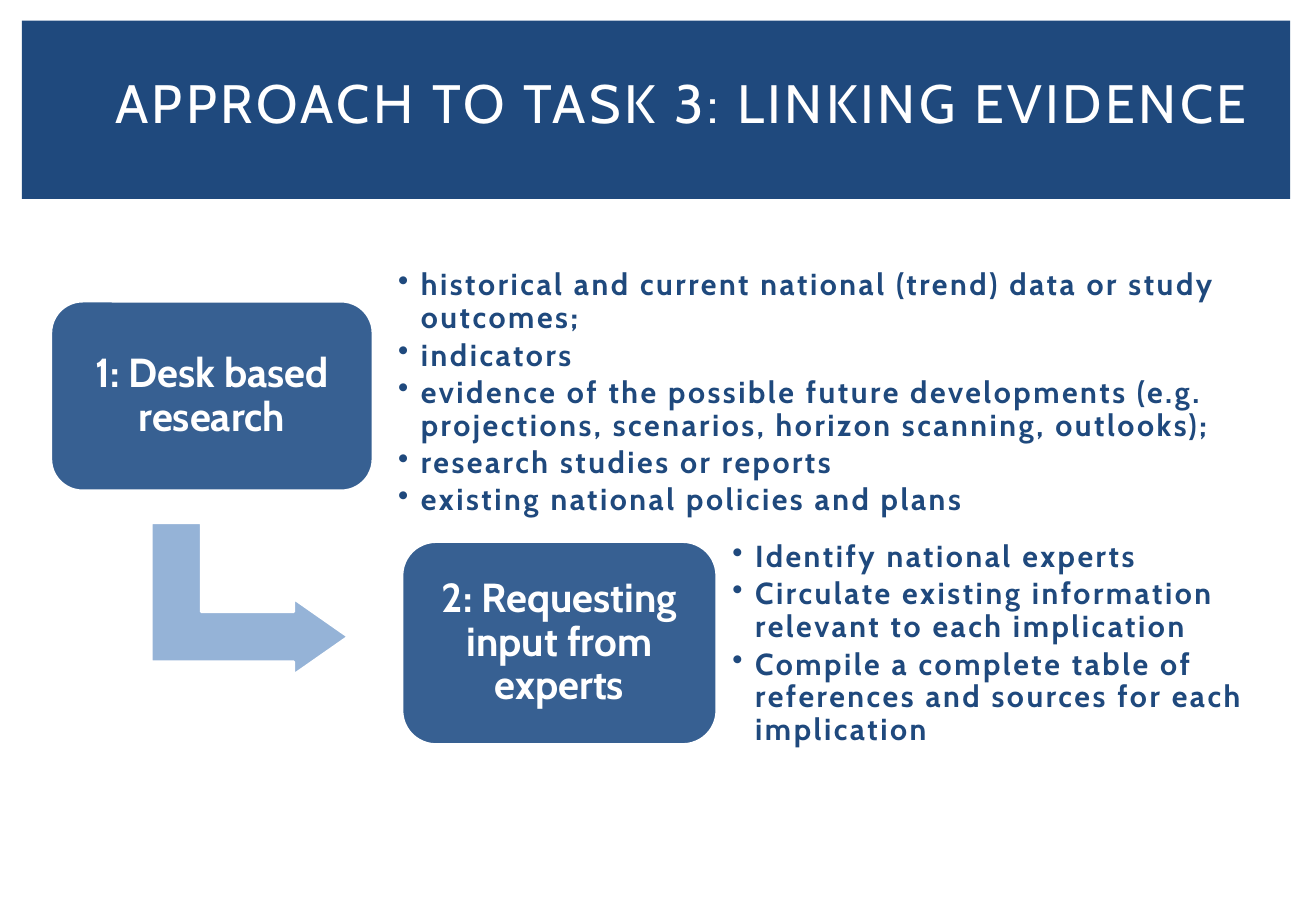
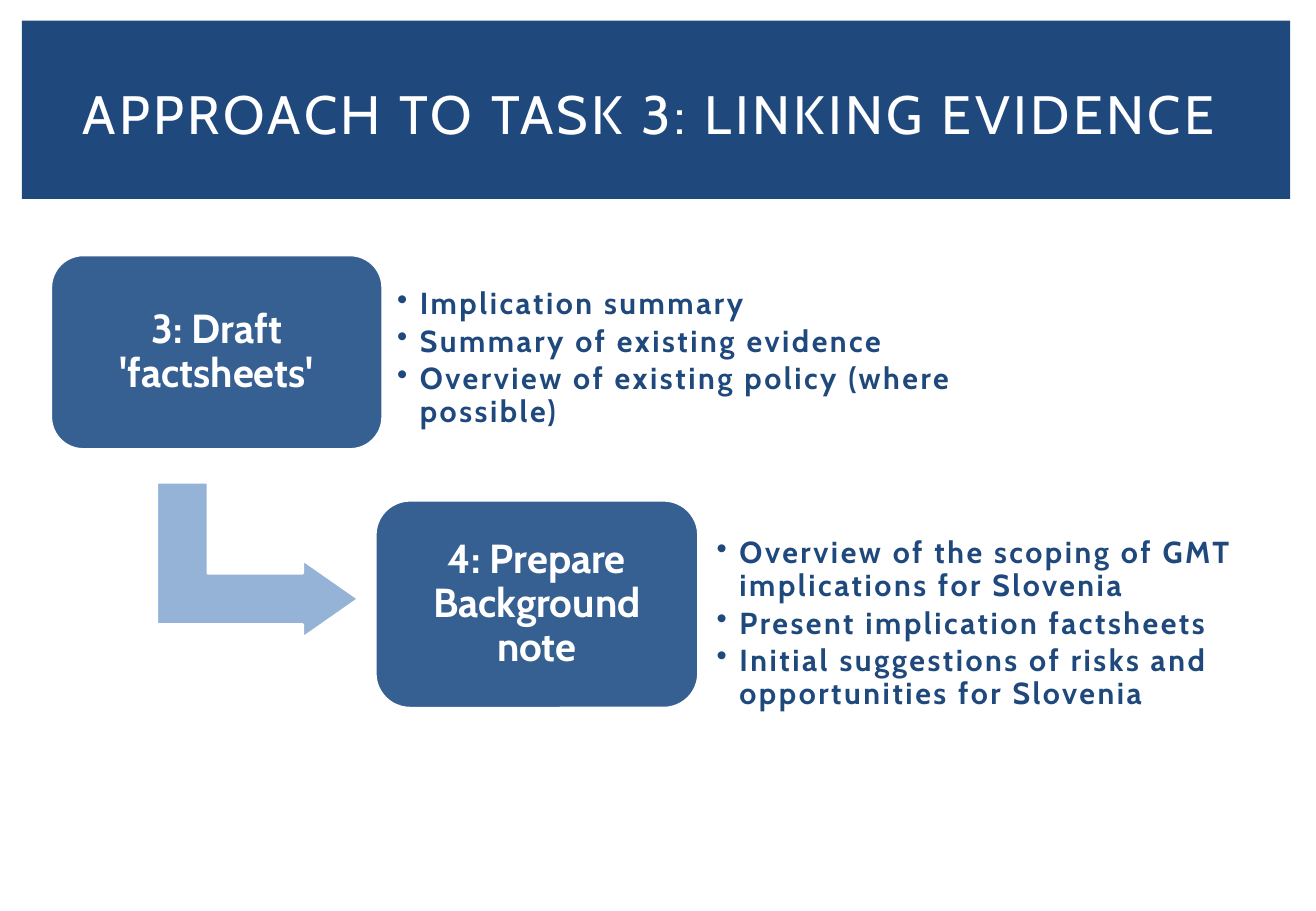
"""Build two slides on linking evidence as stepped box flows."""
from dataclasses import dataclass

from lxml import etree
from pptx import Presentation
from pptx.dml.color import RGBColor
from pptx.enum import shapes, text
from pptx.oxml.ns import qn
from pptx.util import Pt


@dataclass(frozen=True)
class Theme:
    font: str = "Cabin"
    navy: str = "1F497D"
    blue: str = "376092"
    pale: str = "95B3D7"
    white: str = "FFFFFF"
    head: int = 32
    step: int = 24
    body: int = 18


T = Theme()
TITLE = "APPROACH TO TASK 3: LINKING EVIDENCE"
LEFT, MID = text.PP_ALIGN.LEFT, text.PP_ALIGN.CENTER
SLIDES = [
    {
        "title": (44.6, 37.4, MID),
        "arrow": (103, 296.6, 90, 116.6),
        "steps": [
            ("1: Desk based research", (30.2, 178.6, 190.8, 112.3)),
            ("2: Requesting input from experts", (238.3, 321.1, 186.5, 120.2)),
        ],
        "lists": [
            ((231, 167.8, 504, 131), [
                "historical and current national (trend) data or study outcomes;",
                "indicators",
                "evidence of the possible future developments (e.g. projections, "
                "scenarios, horizon scanning, outlooks);",
                "research studies or reports",
                "existing national policies and plans",
            ]),
            ((429.1, 321, 332.6, 121.7), [
                "Identify national experts",
                "Circulate existing information relevant to each implication",
                "Compile a complete table of references and sources for each "
                "implication",
            ]),
        ],
    },
    {
        "title": (41.8, 43.9, LEFT),
        "arrow": (106.6, 272.2, 92.2, 119.5),
        "steps": [
            ("3: Draft 'factsheets'", (30.2, 151.2, 196.6, 115.2)),
            ("4: Prepare Background note", (222.5, 296.6, 191.5, 123.1)),
        ],
        "lists": [
            ((230.4, 145.4, 424, 134.6), [
                "Implication summary",
                "Summary of existing evidence",
                "Overview of existing policy (where possible)",
            ]),
            ((419.8, 314.6, 342, 110.9), [
                "Overview of the scoping of GMT implications for Slovenia",
                "Present implication factsheets",
                "Initial suggestions of risks and opportunities for Slovenia",
            ]),
        ],
    },
]


def rgb(code):
    """Turn a hex code into a colour."""
    return RGBColor.from_string(code)


def place(box):
    """Turn point values into lengths."""
    return [Pt(v) for v in box]


def write(shape, lines, size, color, align, bold=True, pad=7.2, track=0,
          lead=0.9, after=0, anchor=text.MSO_ANCHOR.MIDDLE):
    """Fill a shape with paragraphs in one style."""
    frame = shape.text_frame
    frame.word_wrap = True
    frame.auto_size = text.MSO_AUTO_SIZE.NONE
    frame.vertical_anchor = anchor
    frame.margin_left = frame.margin_right = Pt(pad)
    frame.margin_top = frame.margin_bottom = Pt(min(pad, 7.2))
    frame.text = "\n".join(lines)
    for para in frame.paragraphs:
        para.alignment = align
        para.line_spacing = lead
        para.space_before = Pt(0)
        para.space_after = Pt(after)
        font = para.font
        font.name, font.size, font.bold = T.font, Pt(size), bold
        font.color.rgb = rgb(color)
    for prop in shape.element.iter(qn("a:defRPr")):
        prop.set("spc", str(int(track * 100)))


def block(slide, kind, box, fill, adj=(), line=None):
    """Draw a filled preset shape."""
    shape = slide.shapes.add_shape(kind, *place(box))
    shape.shadow.inherit = False
    shape.fill.solid()
    shape.fill.fore_color.rgb = rgb(fill)
    for i, value in enumerate(adj):
        shape.adjustments[i] = value
    if line:
        shape.line.color.rgb = rgb(line)
        shape.line.width = Pt(1.5)
    else:
        shape.line.fill.background()
    return shape


def band(slide):
    """Draw the title band and move it to the slide's layout."""
    shape = block(slide, shapes.MSO_SHAPE.RECTANGLE,
                  (13, 12.2, 751.7, 105.8), T.navy)
    slide.slide_layout.shapes.element.insert(2, shape.element)


def head(slide, left, top, align):
    """Place and style the title."""
    title = slide.shapes.title
    title.left, title.top, title.width, title.height = place(
        (left, top, 719.3, 53.3))
    write(title, [TITLE], T.head, T.white, align, bold=False, track=2,
          lead=1.0, pad=7.2, anchor=text.MSO_ANCHOR.TOP)
    title.text_frame.margin_top = title.text_frame.margin_bottom = Pt(3.6)


def arrow(slide, box):
    """Draw the bent arrow that leads to the next step."""
    shape = block(slide, shapes.MSO_SHAPE.BENT_UP_ARROW, box, T.pale,
                  (0.328, 0.25, 0.358), T.white)
    shape.rotation = 90


def step(slide, label, box):
    """Draw a rounded step box with its label."""
    shape = block(slide, shapes.MSO_SHAPE.ROUNDED_RECTANGLE, box, T.blue,
                  (0.167,), T.white)
    write(shape, [label], T.step, T.white, MID)


def bullets(slide, box, lines):
    """Add a bulleted list."""
    shape = slide.shapes.add_textbox(*place(box))
    write(shape, lines, T.body, T.navy, LEFT, pad=5, track=1.5, after=2.7)
    for prop in shape.element.iter(qn("a:pPr")):
        prop.set("marL", str(Pt(13.5)))
        prop.set("indent", str(Pt(-13.5)))
        mark = etree.Element(qn("a:buChar"), char="•")
        prop.find(qn("a:defRPr")).addprevious(mark)


def main():
    """Build and save the deck."""
    deck = Presentation()
    deck.slide_width, deck.slide_height = Pt(780), Pt(540)
    layout = deck.slide_layouts[5]
    for i, data in enumerate(SLIDES):
        slide = deck.slides.add_slide(layout)
        if i == 0:
            band(slide)
        head(slide, *data["title"])
        arrow(slide, data["arrow"])
        for label, box in data["steps"]:
            step(slide, label, box)
        for box, lines in data["lists"]:
            bullets(slide, box, lines)
    deck.save("out.pptx")


if __name__ == "__main__":
    main()
